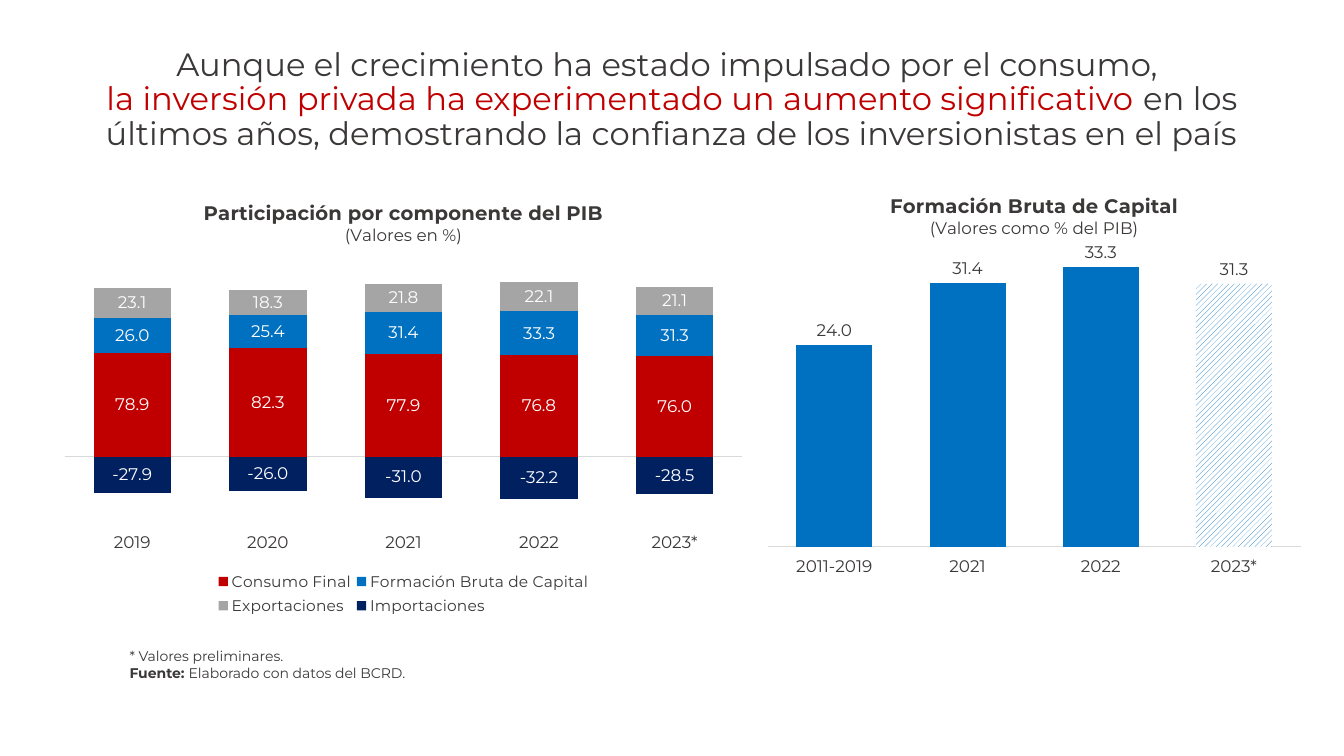
from lxml import etree
from pptx import Presentation
from pptx import util as u
from pptx.chart.data import CategoryChartData
from pptx.dml.color import RGBColor
from pptx.enum import chart as ch, dml, text
from pptx.oxml.ns import qn

FONT = "Montserrat"
DARK, RED, BLUE, GREY, NAVY, RULE, WHITE = (
    "3B3838", "C00000", "0070C0", "A5A5A5", "002060", "D9D9D9", "FFFFFF")
W, H = 13.33, 7.5


def rgb(value):
    return RGBColor.from_string(value)


def style(font, size, color=DARK, bold=False):
    for name, value in dict(name=FONT, size=u.Pt(size), bold=bold).items():
        setattr(font, name, value)
    font.color.rgb = rgb(color)


def add_run(p, words, size, color=DARK, bold=False):
    r = p.add_run()
    r.text = words
    style(r.font, size, color, bold)


def inches(box):
    return [u.Inches(v) for v in box]


def set_layout(parent, box, before, inner=False):
    """Fix a chart part at shares of the chart: x, y, width, height."""
    for old in parent.findall(qn("c:layout")):
        parent.remove(old)
    layout = etree.Element(qn("c:layout"))
    manual = etree.SubElement(layout, qn("c:manualLayout"))
    settings = [("layoutTarget", "inner")] if inner else []
    settings += [("xMode", "edge"), ("yMode", "edge")]
    settings += zip("xywh", map(str, box))
    for tag, value in settings:
        etree.SubElement(manual, qn("c:" + tag)).set("val", value)
    parent.find(qn(before)).addprevious(layout)


def add_heading(slide, box):
    sp = slide.shapes.title
    for name, value in zip(("left", "top", "width", "height"), inches(box)):
        setattr(sp, name, value)
    tf = sp.text_frame
    for name, value in dict(word_wrap=True, auto_size=text.MSO_AUTO_SIZE.NONE,
                            vertical_anchor=text.MSO_ANCHOR.MIDDLE).items():
        setattr(tf, name, value)
    p = tf.paragraphs[0]
    p.alignment, p.line_spacing = text.PP_ALIGN.CENTER, 0.9
    add_run(p, "Aunque el crecimiento ha estado impulsado por el consumo, ", 23)
    p.add_line_break()
    add_run(p, "la inversión privada ha experimentado un aumento significativo", 23, RED)
    add_run(p, " en los últimos años, demostrando la confianza de los "
               "inversionistas en el país", 23)


def add_columns(slide, box, kind, title, cats, series, plot, limits, fmt,
                label_color, label_place, overlap):
    """Column chart with a two-line title; series maps name to (colour, values)."""
    data = CategoryChartData(number_format=fmt)
    data.categories = cats
    for name, (_, values) in series.items():
        data.add_series(name, values)
    chart = slide.shapes.add_chart(kind, *inches(box), data).chart
    style(chart.font, 10)
    chart.has_legend = False

    tf = chart.chart_title.text_frame
    add_run(tf.paragraphs[0], title[0], 14, bold=True)
    add_run(tf.add_paragraph(), title[1], 12)

    axis = chart.category_axis
    for name, value in dict(major_tick_mark=ch.XL_TICK_MARK.NONE,
                            tick_label_position=ch.XL_TICK_LABEL_POSITION.LOW,
                            has_major_gridlines=False).items():
        setattr(axis, name, value)
    style(axis.tick_labels.font, 12)
    axis.format.line.color.rgb = rgb(RULE)
    axis.format.line.width = u.Pt(0.75)
    values_axis = chart.value_axis
    for name, value in dict(visible=False, has_major_gridlines=False,
                            minimum_scale=limits[0],
                            maximum_scale=limits[1]).items():
        setattr(values_axis, name, value)

    bars = chart.plots[0]
    bars.gap_width, bars.overlap, bars.vary_by_categories = 75, overlap, False
    for s, (color, _) in zip(bars.series, series.values()):
        s.invert_if_negative = False
        s.format.fill.solid()
        s.format.fill.fore_color.rgb = rgb(color)
        labels = s.data_labels
        for name, value in dict(show_value=True, number_format=fmt,
                                number_format_is_linked=False,
                                position=label_place).items():
            setattr(labels, name, value)
        style(labels.font, 12, label_color)
    set_layout(bars._element.getparent(), plot, "c:barChart", inner=True)
    return chart


def add_gdp_share(slide, box):
    series = {
        "Consumo Final": (RED, (78.9, 82.3, 77.9, 76.8, 76.0)),
        "Formación Bruta de Capital": (BLUE, (26.0, 25.4, 31.4, 33.3, 31.3)),
        "Exportaciones": (GREY, (23.1, 18.3, 21.8, 22.1, 21.1)),
        "Importaciones": (NAVY, (-27.9, -26.0, -31.0, -32.2, -28.5)),
    }
    chart = add_columns(
        slide, box, ch.XL_CHART_TYPE.COLUMN_STACKED,
        ("Participación por componente del PIB", "(Valores en %)"),
        ("2019", "2020", "2021", "2022", "2023*"), series,
        (0.02, 0.175, 0.96, 0.603), (-50, 150), "#,##0.0", WHITE,
        ch.XL_LABEL_POSITION.CENTER, 100)
    chart.has_legend = True
    legend = chart.legend
    legend.position, legend.include_in_layout = ch.XL_LEGEND_POSITION.BOTTOM, False
    style(legend.font, 11)
    set_layout(legend._element, (0.23, 0.88, 0.54, 0.12), "c:overlay")


def add_capital_formation(slide, box):
    chart = add_columns(
        slide, box, ch.XL_CHART_TYPE.COLUMN_CLUSTERED,
        ("Formación Bruta de Capital", "(Valores como % del PIB)"),
        ("2011-2019", "2021", "2022", "2023*"),
        {"Formación Bruta de Capital": (BLUE, (24.0, 31.4, 33.3, 31.3))},
        (0.02, 0.19, 0.96, 0.73), (0, 35), "0.0", DARK,
        ch.XL_LABEL_POSITION.OUTSIDE_END, -27)
    fill = chart.plots[0].series[0].points[3].format.fill
    fill.patterned()
    fill.pattern = dml.MSO_PATTERN.WIDE_UPWARD_DIAGONAL
    fill.fore_color.rgb, fill.back_color.rgb = rgb(BLUE), rgb(WHITE)


def add_source_note(slide, box):
    tf = slide.shapes.add_textbox(*inches(box)).text_frame
    tf.word_wrap = True
    add_run(tf.paragraphs[0], "* Valores preliminares.", 10)
    p = tf.add_paragraph()
    add_run(p, "Fuente: ", 10, bold=True)
    add_run(p, "Elaborado con datos del BCRD.", 10)


def main():
    prs = Presentation()
    prs.slide_width, prs.slide_height = inches((W, H))
    slide = prs.slides.add_slide(prs.slide_layouts[5])
    split = 0.563 * W
    add_source_note(slide, (0.089 * W, 0.85 * H, 0.911 * W, 0.06 * H))
    add_gdp_share(slide, (0.5, 0.241 * H, split - 0.5, 0.579 * H))
    add_capital_formation(slide, (split, 0.233 * H, 0.413 * W, 0.533 * H))
    add_heading(slide, (0.03 * W, 0.055 * H, 0.94 * W, 0.156 * H))
    prs.save("out.pptx")


if __name__ == "__main__":
    main()
